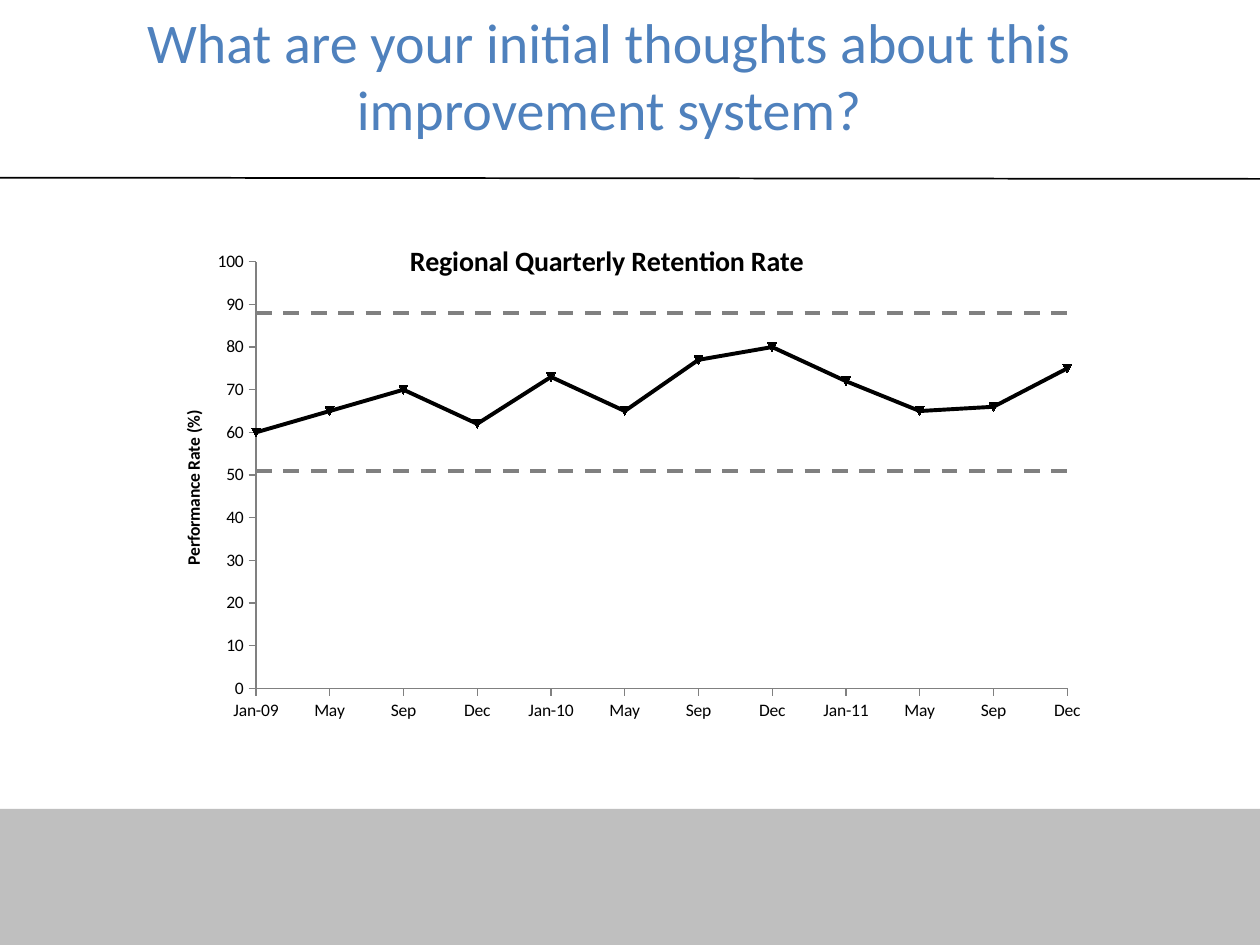
from lxml import etree
from pptx import Presentation
from pptx.chart.data import CategoryChartData
from pptx.dml.color import RGBColor
from pptx.enum.chart import XL_CHART_TYPE, XL_MARKER_STYLE, XL_TICK_MARK
from pptx.enum.dml import MSO_LINE
from pptx.enum.shapes import MSO_CONNECTOR, MSO_SHAPE
from pptx.enum.text import MSO_ANCHOR, PP_ALIGN
from pptx.oxml import parse_xml
from pptx.oxml.ns import nsdecls, qn
from pptx.util import Inches, Pt

# Content
HEADING = "What are your initial thoughts about this improvement system?"
CHART_TITLE = "Regional Quarterly Retention Rate"
AXIS_TITLE = "Performance Rate (%)"
YEARS = ("09", "10", "11")
QUARTERS = [q for year in YEARS for q in (f"Jan-{year}", "May", "Sep", "Dec")]
RETENTION = [60, 65, 70, 62, 73, 65, 77, 80, 72, 65, 66, 75]
UPPER_LIMIT, LOWER_LIMIT = 88, 51

# Style
FONT = "Calibri"
BLUE = RGBColor(0x4F, 0x81, 0xBD)
BLACK = RGBColor(0, 0, 0)
GRAY = RGBColor(0x80, 0x80, 0x80)
FOOTER_GRAY = RGBColor(0xBF, 0xBF, 0xBF)
WIDTH, HEIGHT = 10, 7.5
FOOTER_TOP = 6.42


def place(parent, x, y, w=None, h=None):
    """Give a chart part a fixed layout, in shares of the chart."""
    old = parent.find(qn("c:layout"))
    if old is not None:
        parent.remove(old)
    target = '<c:layoutTarget val="inner"/>' if w else ""
    size = f'<c:w val="{w}"/><c:h val="{h}"/>' if w else ""
    layout = parse_xml(
        f'<c:layout {nsdecls("c")}><c:manualLayout>{target}'
        f'<c:xMode val="edge"/><c:yMode val="edge"/>'
        f'<c:x val="{x}"/><c:y val="{y}"/>{size}</c:manualLayout></c:layout>')
    text = parent.find(qn("c:tx"))
    if text is not None:
        text.addnext(layout)
    else:
        parent.insert(0, layout)


def write_title(title, words, size, x, y):
    run = title.text_frame.paragraphs[0].add_run()
    run.text = words
    run.font.name, run.font.size, run.font.bold = FONT, Pt(size), True
    run.font.color.rgb = BLACK
    place(title._element, x, y)


prs = Presentation()
prs.slide_width, prs.slide_height = Inches(WIDTH), Inches(HEIGHT)
slide = prs.slides.add_slide(prs.slide_layouts[6])

# Footer band
footer = slide.shapes.add_shape(
    MSO_SHAPE.RECTANGLE, 0, Inches(FOOTER_TOP),
    Inches(WIDTH), Inches(HEIGHT - FOOTER_TOP))
footer.shadow.inherit = False
footer.fill.solid()
footer.fill.fore_color.rgb = FOOTER_GRAY
footer.line.fill.background()

# Rule under the heading
rule = slide.shapes.add_connector(
    MSO_CONNECTOR.STRAIGHT, 0, Inches(1.41), Inches(WIDTH), Inches(1.42))
rule.line.color.rgb = BLACK
rule.line.width = Pt(1)
etree.SubElement(rule._element.spPr, qn("a:effectLst"))

# Run chart with control limits
data = CategoryChartData()
data.categories = QUARTERS
data.add_series("Upper limit", [UPPER_LIMIT] * len(QUARTERS))
data.add_series("Lower limit", [LOWER_LIMIT] * len(QUARTERS))
data.add_series("Retention rate", RETENTION)
chart = slide.shapes.add_chart(
    XL_CHART_TYPE.LINE_MARKERS, Inches(1.27), Inches(1.67),
    Inches(7.47), Inches(4.16), data).chart
chart.has_legend = False
chart.font.name, chart.font.size = FONT, Pt(10)
chart.font.color.rgb = BLACK
write_title(chart.chart_title, CHART_TITLE, 16, 0.26, 0.05)
place(chart._chartSpace.chart.plotArea, 0.102, 0.098, 0.862, 0.814)

# Axes
rates, quarters = chart.value_axis, chart.category_axis
rates.minimum_scale, rates.maximum_scale, rates.major_unit = 0, 100, 10
rates.has_major_gridlines = False
rates.tick_labels.number_format = "0"
rates.tick_labels.number_format_is_linked = False
write_title(rates.axis_title, AXIS_TITLE, 10, 0.02, 0.376)
for axis in (rates, quarters):
    axis.major_tick_mark = XL_TICK_MARK.OUTSIDE
    axis.minor_tick_mark = XL_TICK_MARK.NONE
    axis.format.line.color.rgb = GRAY
    axis.format.line.width = Pt(0.75)
# The first and last quarters sit on the edges of the plot
rates._element.find(qn("c:majorUnit")).addprevious(
    parse_xml(f'<c:crossBetween {nsdecls("c")} val="midCat"/>'))

# Series
plot = chart.plots[0]
plot.vary_by_categories = False
*limits, retention = plot.series
for series in plot.series:
    series.smooth = False
    series.format.line.width = Pt(2.25)
for limit in limits:
    limit.format.line.color.rgb = GRAY
    limit.format.line.dash_style = MSO_LINE.DASH
    limit.marker.style = XL_MARKER_STYLE.NONE
retention.format.line.color.rgb = BLACK
marker = retention.marker
marker.style, marker.size = XL_MARKER_STYLE.AUTOMATIC, 5
marker.format.fill.solid()
marker.format.fill.fore_color.rgb = BLACK
marker.format.line.color.rgb = BLACK

# Heading
heading = slide.shapes.add_textbox(
    Inches(0.5), 0, Inches(8.67), Inches(1.18)).text_frame
heading.word_wrap = True
heading.vertical_anchor = MSO_ANCHOR.MIDDLE
paragraph = heading.paragraphs[0]
paragraph.alignment = PP_ALIGN.CENTER
run = paragraph.add_run()
run.text = HEADING
run.font.name, run.font.size = FONT, Pt(32)
run.font.color.rgb = BLUE

prs.save("out.pptx")
